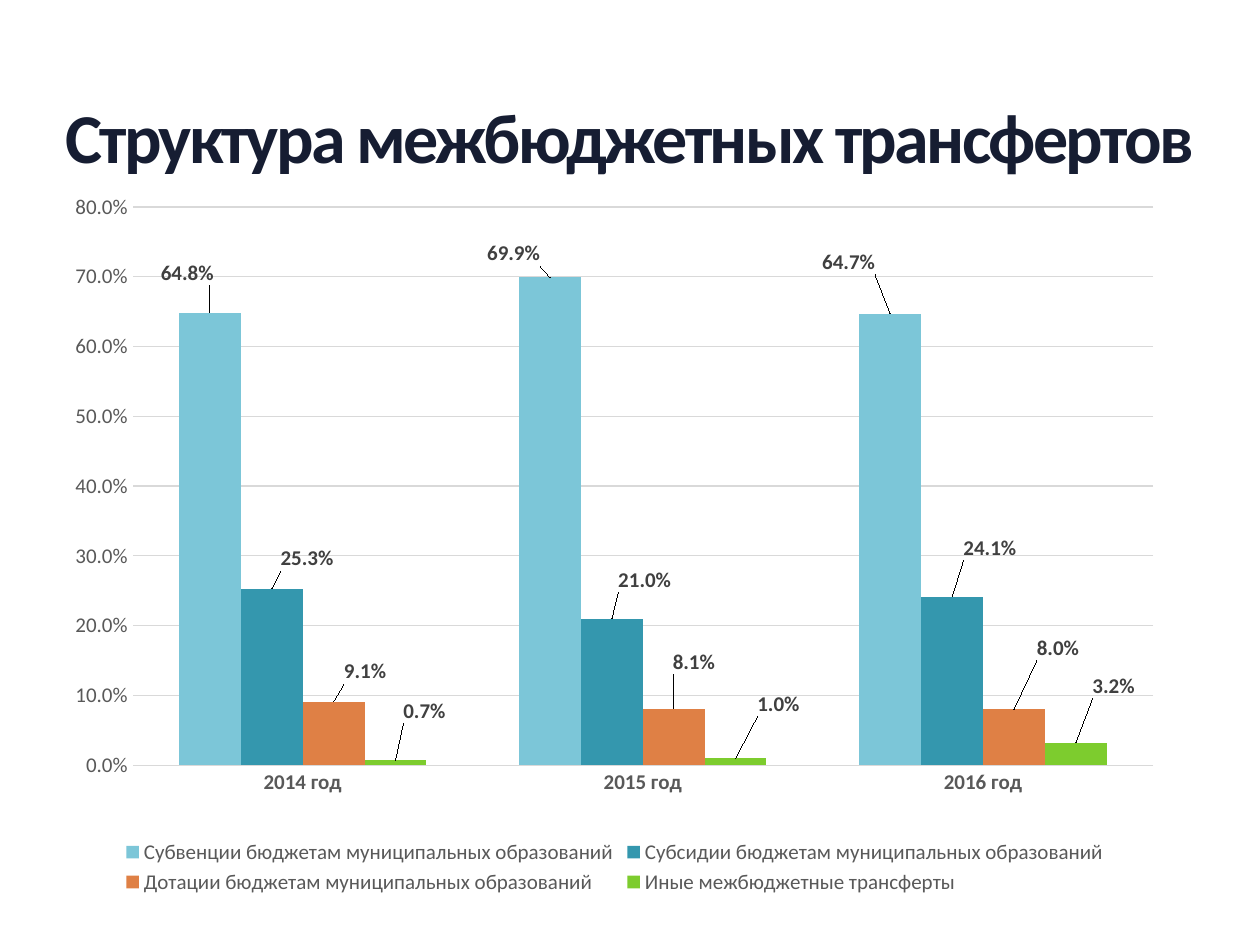
from dataclasses import dataclass

from lxml.etree import SubElement
from pptx import Presentation
from pptx.chart.data import CategoryChartData
from pptx.dml.color import RGBColor
from pptx.enum.chart import XL_CHART_TYPE as Kind
from pptx.enum.chart import XL_LABEL_POSITION as Spot
from pptx.enum.chart import XL_LEGEND_POSITION as Side
from pptx.enum.chart import XL_TICK_MARK as Tick
from pptx.enum.text import MSO_ANCHOR as Anchor
from pptx.enum.text import PP_ALIGN as Align
from pptx.oxml.ns import qn
from pptx.util import Inches, Pt


@dataclass(frozen=True)
class Theme:
    face: str = "Calibri"
    head: str = "161D32"
    text: str = "595959"
    label: str = "404040"
    grid: str = "D9D9D9"
    big: int = 40
    small: int = 12


THEME = Theme()
WIDE, HIGH = 8.9, 5.61  # chart size in inches
RATE = "0.0%"
YEARS = ["2014 год", "2015 год", "2016 год"]
# name, colour, values, label shifts in inches
SERIES = [
    ("Субвенции бюджетам муниципальных образований", "7CC6D8",
     (0.648, 0.699, 0.647), ((-0.18, -0.18), (-0.29, -0.05), (-0.33, -0.27))),
    ("Субсидии бюджетам муниципальных образований", "3497AE",
     (0.253, 0.21, 0.241), ((0.28, -0.1), (0.26, -0.17), (0.3, -0.25))),
    ("Дотации бюджетам муниципальных образований", "DF8045",
     (0.091, 0.081, 0.08), ((0.25, -0.1), (0.16, -0.23), (0.35, -0.35))),
    ("Иные межбюджетные трансферты", "7DCC2E",
     (0.007, 0.01, 0.032), ((0.23, -0.25), (0.34, -0.29), (0.3, -0.31))),
]


def style(font, size, color, bold=False):
    font.name = THEME.face
    font.size = Pt(size)
    font.bold = bold
    font.color.rgb = RGBColor.from_string(color)


def add_title(slide, text):
    box = slide.shapes.add_textbox(Inches(0.12), Inches(0.76), Inches(9.76), Inches(0.71))
    frame = box.text_frame
    frame.word_wrap = True
    frame.vertical_anchor = Anchor.MIDDLE
    frame.margin_left = frame.margin_right = 0
    frame.margin_top = frame.margin_bottom = 0
    para = frame.paragraphs[0]
    para.alignment = Align.CENTER
    para.line_spacing = 0.9
    run = para.add_run()
    run.text = text
    style(para.font, THEME.big, THEME.head, True)
    run._r.get_or_add_rPr().set("spc", "-150")


def set_layout(parent, place, **values):
    """Give a chart part a manual layout, at the given child index."""
    for old in parent.findall(qn("c:layout")):
        parent.remove(old)
    layout = parent.makeelement(qn("c:layout"))
    parent.insert(place, layout)
    manual = SubElement(layout, qn("c:manualLayout"))
    for tag, value in values.items():
        SubElement(manual, qn(f"c:{tag}")).set("val", str(value))


def style_axis(axis, bold=False):
    axis.major_tick_mark = axis.minor_tick_mark = Tick.NONE
    axis.format.line.fill.background()
    style(axis.tick_labels.font, THEME.small, THEME.text, bold)


def style_series(series, color, shifts):
    fill = series.format.fill
    fill.solid()
    fill.fore_color.rgb = RGBColor.from_string(color)
    series.invert_if_negative = False
    labels = series.data_labels
    labels.show_value = True
    labels.number_format = RATE
    labels.number_format_is_linked = False
    labels.position = Spot.OUTSIDE_END
    style(labels.font, THEME.small, THEME.label, True)
    for index, (right, down) in enumerate(shifts):
        label = series.points[index].data_label
        style(label.font, THEME.small, THEME.label, True)
        label.position = Spot.OUTSIDE_END
        node = labels._element.findall(qn("c:dLbl"))[index]
        set_layout(node, 1, x=right / WIDE, y=down / HIGH)


def add_bars(slide):
    data = CategoryChartData(number_format=RATE)
    data.categories = YEARS
    for name, _, values, _ in SERIES:
        data.add_series(name, values)
    chart = slide.shapes.add_chart(
        Kind.COLUMN_CLUSTERED, Inches(0.43), Inches(1.53),
        Inches(WIDE), Inches(HIGH), data).chart
    style(chart.font, THEME.small, THEME.text)
    chart.has_title = False
    chart.has_legend = True
    chart.legend.position = Side.BOTTOM
    chart.legend.include_in_layout = False
    style(chart.legend.font, THEME.small, THEME.text)

    style_axis(chart.category_axis, True)
    axis = chart.value_axis
    style_axis(axis)
    axis.minimum_scale, axis.maximum_scale, axis.major_unit = 0, 0.8, 0.1
    axis.tick_labels.number_format = RATE
    axis.tick_labels.number_format_is_linked = False
    line = axis.major_gridlines.format.line
    line.width = Pt(0.75)
    line.color.rgb = RGBColor.from_string(THEME.grid)

    plot = chart.plots[0]
    plot.gap_width, plot.overlap = 150, 0
    plot.vary_by_categories = False
    for series, (_, color, _, shifts) in zip(plot.series, SERIES):
        style_series(series, color, shifts)
    area = chart._chartSpace.find(".//" + qn("c:plotArea"))
    set_layout(area, 0, layoutTarget="inner", xMode="edge", yMode="edge",
               x=0.07, y=0.02, w=0.91, h=0.79)


def main():
    deck = Presentation()
    deck.slide_width, deck.slide_height = Inches(10), Inches(7.5)
    slide = deck.slides.add_slide(deck.slide_layouts[6])
    add_title(slide, "Структура межбюджетных трансфертов")
    add_bars(slide)
    deck.save("out.pptx")


if __name__ == "__main__":
    main()
